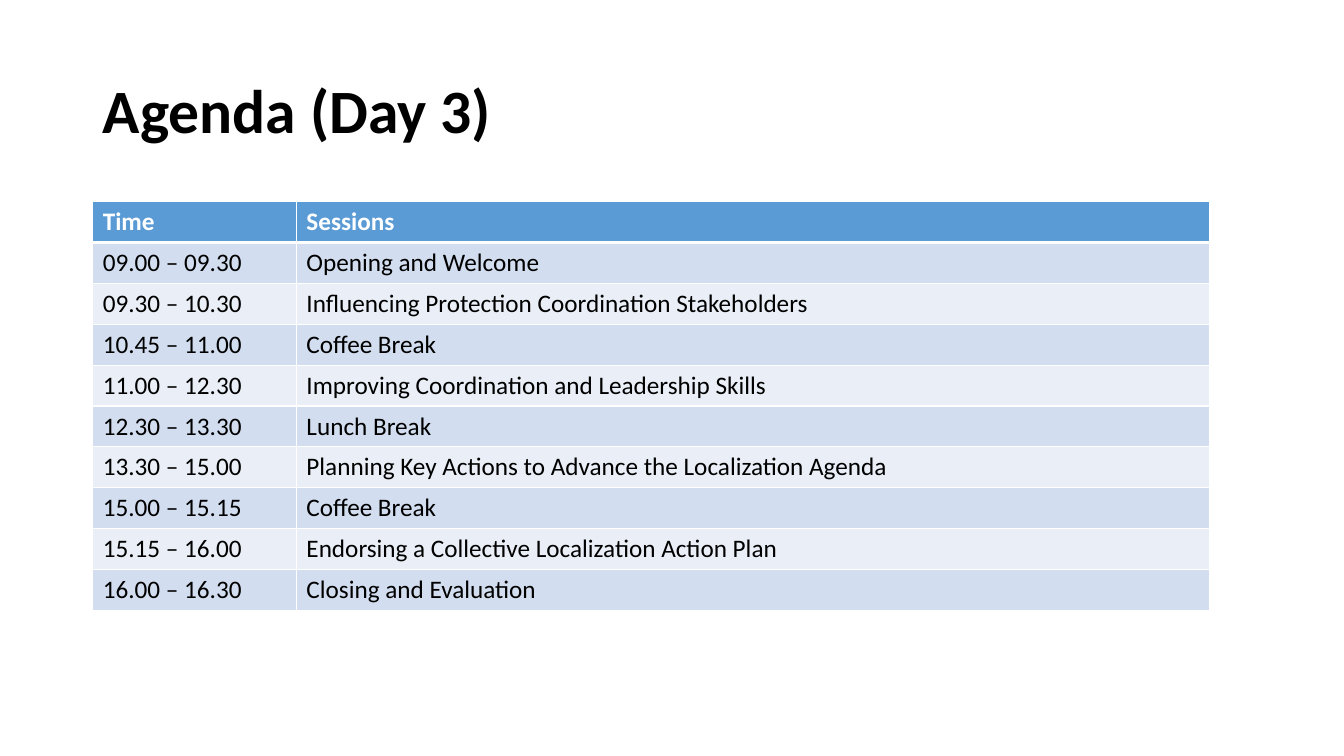
from lxml.etree import SubElement
from pptx import Presentation
from pptx.dml.color import RGBColor
from pptx.enum.text import MSO_ANCHOR, PP_ALIGN
from pptx.oxml.ns import qn
from pptx.util import Inches, Pt

TITLE = "Agenda (Day 3)"
AGENDA = [
    ("Time", "Sessions"),
    ("09.00 – 09.30", "Opening and Welcome"),
    ("09.30 – 10.30", "Influencing Protection Coordination Stakeholders"),
    ("10.45 – 11.00", "Coffee Break"),
    ("11.00 – 12.30", "Improving Coordination and Leadership Skills"),
    ("12.30 – 13.30", "Lunch Break"),
    ("13.30 – 15.00", "Planning Key Actions to Advance the Localization Agenda"),
    ("15.00 – 15.15", "Coffee Break"),
    ("15.15 – 16.00", "Endorsing a Collective Localization Action Plan"),
    ("16.00 – 16.30", "Closing and Evaluation"),
]
COL_WIDTHS = (2.02, 9.06)
LEFT, TABLE_TOP, TABLE_HEIGHT = 0.92, 2, 4.05

BLACK = RGBColor(0x00, 0x00, 0x00)
WHITE = RGBColor(0xFF, 0xFF, 0xFF)
HEADER_BLUE = RGBColor(0x5B, 0x9B, 0xD5)
BANDS = (RGBColor(0xEA, 0xEF, 0xF7), RGBColor(0xD2, 0xDE, 0xEF))

TITLE_FONT = {"name": "Calibri", "size": Pt(44), "bold": True}
HEADER_FONT = {"name": "Calibri", "size": Pt(18), "bold": True}
BODY_FONT = {"name": "Calibri", "size": Pt(18), "bold": False}


def write(p, text, fmt, color):
    """Add a formatted run to a paragraph."""
    r = p.add_run()
    r.text = text
    for name, value in fmt.items():
        setattr(r.font, name, value)
    r.font.color.rgb = color


def set_borders(cell, widths):
    """Draw white cell borders with a width in points per side."""
    tc_pr = cell._tc.get_or_add_tcPr()
    for side, width in widths.items():
        ln = SubElement(tc_pr, qn(f"a:ln{side}"), w=str(Pt(width)))
        fill = SubElement(ln, qn("a:solidFill"))
        SubElement(fill, qn("a:srgbClr"), val=str(WHITE))


def add_title(s):
    """Place and format the slide title."""
    sp = s.shapes.title
    sp.left, sp.top, sp.width, sp.height = map(Inches, (LEFT, 0.4, 11.5, 1.45))
    tf = sp.text_frame
    tf.vertical_anchor = MSO_ANCHOR.MIDDLE
    p = tf.paragraphs[0]
    p.alignment, p.line_spacing = PP_ALIGN.LEFT, 0.9
    write(p, TITLE, TITLE_FONT, BLACK)


def add_agenda(s):
    """Add the agenda table with a header and banded rows."""
    table = s.shapes.add_table(
        len(AGENDA), len(COL_WIDTHS), Inches(LEFT), Inches(TABLE_TOP),
        Inches(sum(COL_WIDTHS)), Inches(TABLE_HEIGHT)).table
    for col, width in zip(table.columns, COL_WIDTHS):
        col.width = Inches(width)
    for i, row in enumerate(AGENDA):
        header = i == 0
        borders = {"L": 1, "R": 1, "T": 3 if i == 1 else 1, "B": 3 if header else 1}
        for j, text in enumerate(row):
            cell = table.cell(i, j)
            set_borders(cell, borders)
            cell.fill.solid()
            cell.fill.fore_color.rgb = HEADER_BLUE if header else BANDS[i % 2]
            write(cell.text_frame.paragraphs[0], text,
                  HEADER_FONT if header else BODY_FONT, WHITE if header else BLACK)


def main():
    """Build the agenda slide."""
    prs = Presentation()
    prs.slide_width, prs.slide_height = Inches(13.33), Inches(7.5)
    s = prs.slides.add_slide(prs.slide_layouts[5])
    add_title(s)
    add_agenda(s)
    prs.save("out.pptx")


if __name__ == "__main__":
    main()
